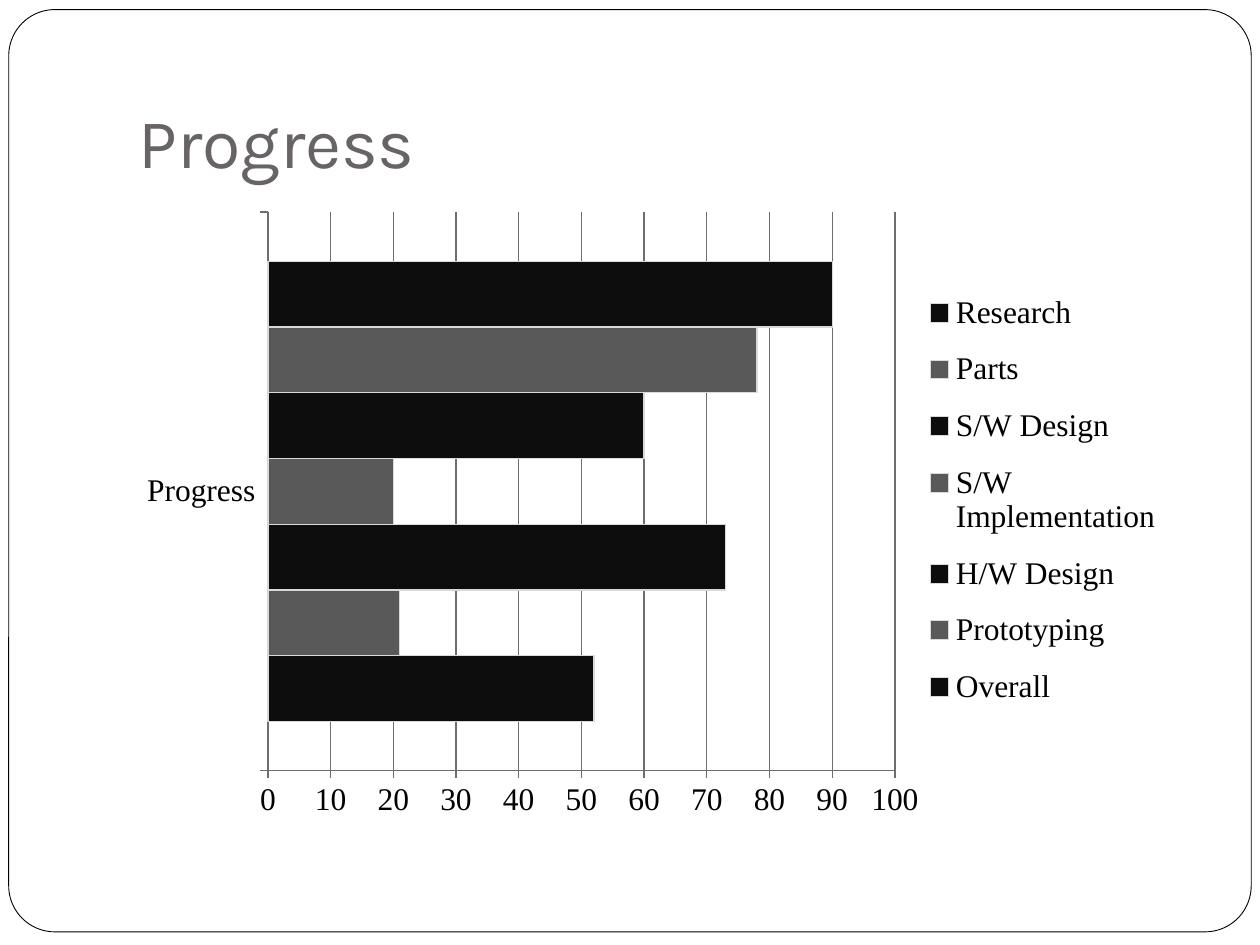
from lxml import etree
from pptx import Presentation
from pptx import util as u
from pptx.chart.data import CategoryChartData
from pptx.dml.color import RGBColor
from pptx.enum import chart as charts, shapes, text
from pptx.oxml import ns

WHITE = RGBColor(0xFF, 0xFF, 0xFF)
BLACK = RGBColor(0x00, 0x00, 0x00)
TITLE_GRAY = RGBColor(0x69, 0x64, 0x64)
AXIS_GRAY = RGBColor(0x6E, 0x6E, 0x6E)
BAR_EDGE = RGBColor(0xD9, 0xD9, 0xD9)
BAR_COLORS = (RGBColor(0x0D, 0x0D, 0x0D), RGBColor(0x59, 0x59, 0x59))

PROGRESS = {
    "Overall": 52,
    "Prototyping": 21,
    "H/W Design": 73,
    "S/W Implementation": 20,
    "S/W Design": 60,
    "Parts": 78,
    "Research": 90,
}


def add_frame(slide, left, top, width, height):
    """Draw the rounded border around the slide."""
    shape = slide.shapes.add_shape(
        shapes.MSO_SHAPE.ROUNDED_RECTANGLE,
        u.Pt(left), u.Pt(top), u.Pt(width), u.Pt(height))
    shape.adjustments[0] = 0.05
    shape.shadow.inherit = False
    shape.fill.solid()
    shape.fill.fore_color.rgb = WHITE
    shape.line.color.rgb = BLACK
    shape.line.width = u.Pt(0.5)


def add_title(slide, left, top, width, height):
    """Place the slide title at the bottom of its box."""
    box = slide.shapes.add_textbox(u.Pt(left), u.Pt(top), u.Pt(width), u.Pt(height))
    frame = box.text_frame
    frame.word_wrap = True
    frame.vertical_anchor = text.MSO_ANCHOR.BOTTOM
    frame.margin_bottom = u.Pt(7.2)
    paragraph = frame.paragraphs[0]
    paragraph.text = "Progress"
    paragraph.font.name = "Karla"
    paragraph.font.size = u.Pt(40)
    paragraph.font.color.rgb = TITLE_GRAY


def style_line(line, color):
    """Give a chart line its colour and width."""
    line.color.rgb = color
    line.width = u.Pt(0.75)


def set_layout(parent, index, settings):
    """Fix a chart part's place by fractions of the chart, as a child at the index."""
    for old in parent.findall(ns.qn("c:layout")):
        parent.remove(old)
    layout = etree.Element(ns.qn("c:layout"))
    manual = etree.SubElement(layout, ns.qn("c:manualLayout"))
    for tag, value in settings.items():
        etree.SubElement(manual, ns.qn(f"c:{tag}")).set("val", str(value))
    parent.insert(index, layout)


def add_progress_chart(slide, left, top, width, height):
    """Add the bar chart with one series per work area."""
    data = CategoryChartData()
    data.categories = ["Progress"]
    for name, value in PROGRESS.items():
        data.add_series(name, [value])
    chart = slide.shapes.add_chart(
        charts.XL_CHART_TYPE.BAR_CLUSTERED,
        u.Pt(left), u.Pt(top), u.Pt(width), u.Pt(height), data).chart
    chart.has_title = False
    chart.font.name = "Times New Roman"
    chart.font.size = u.Pt(18)
    chart.font.color.rgb = BLACK
    chart.has_legend = True
    chart.legend.position = charts.XL_LEGEND_POSITION.RIGHT
    chart.legend.include_in_layout = False

    edges = {"xMode": "edge", "yMode": "edge"}
    plot_area = chart.plots[0]._element.getparent()
    set_layout(plot_area, 0, {"layoutTarget": "inner", **edges,
                              "x": 0.1325, "y": 0.02, "w": 0.5855, "h": 0.887})
    legend = chart.legend._element
    set_layout(legend, 1, {**edges, "x": 0.736, "y": 0.117, "w": 0.24, "h": 0.72})

    plot = chart.plots[0]
    plot.gap_width = 150
    plot.vary_by_categories = False
    for index, series in enumerate(plot.series):
        series.format.fill.solid()
        series.format.fill.fore_color.rgb = BAR_COLORS[index % 2]
        style_line(series.format.line, BAR_EDGE)

    for axis in (chart.category_axis, chart.value_axis):
        axis.major_tick_mark = charts.XL_TICK_MARK.OUTSIDE
        style_line(axis.format.line, AXIS_GRAY)
    value_axis = chart.value_axis
    value_axis.minimum_scale = 0
    value_axis.maximum_scale = 100
    value_axis.major_unit = 10
    value_axis.has_major_gridlines = True
    style_line(value_axis.major_gridlines.format.line, AXIS_GRAY)


def main():
    """Build the progress slide and save it."""
    presentation = Presentation()
    presentation.slide_width = u.Pt(720)
    presentation.slide_height = u.Pt(540)
    slide = presentation.slides.add_slide(presentation.slide_layouts[6])
    add_frame(slide, 5, 5.5, 710, 527)
    add_title(slide, 72, 21.6, 612, 90)
    add_progress_chart(slide, 72, 114, 612, 360)
    presentation.save("out.pptx")


if __name__ == "__main__":
    main()
